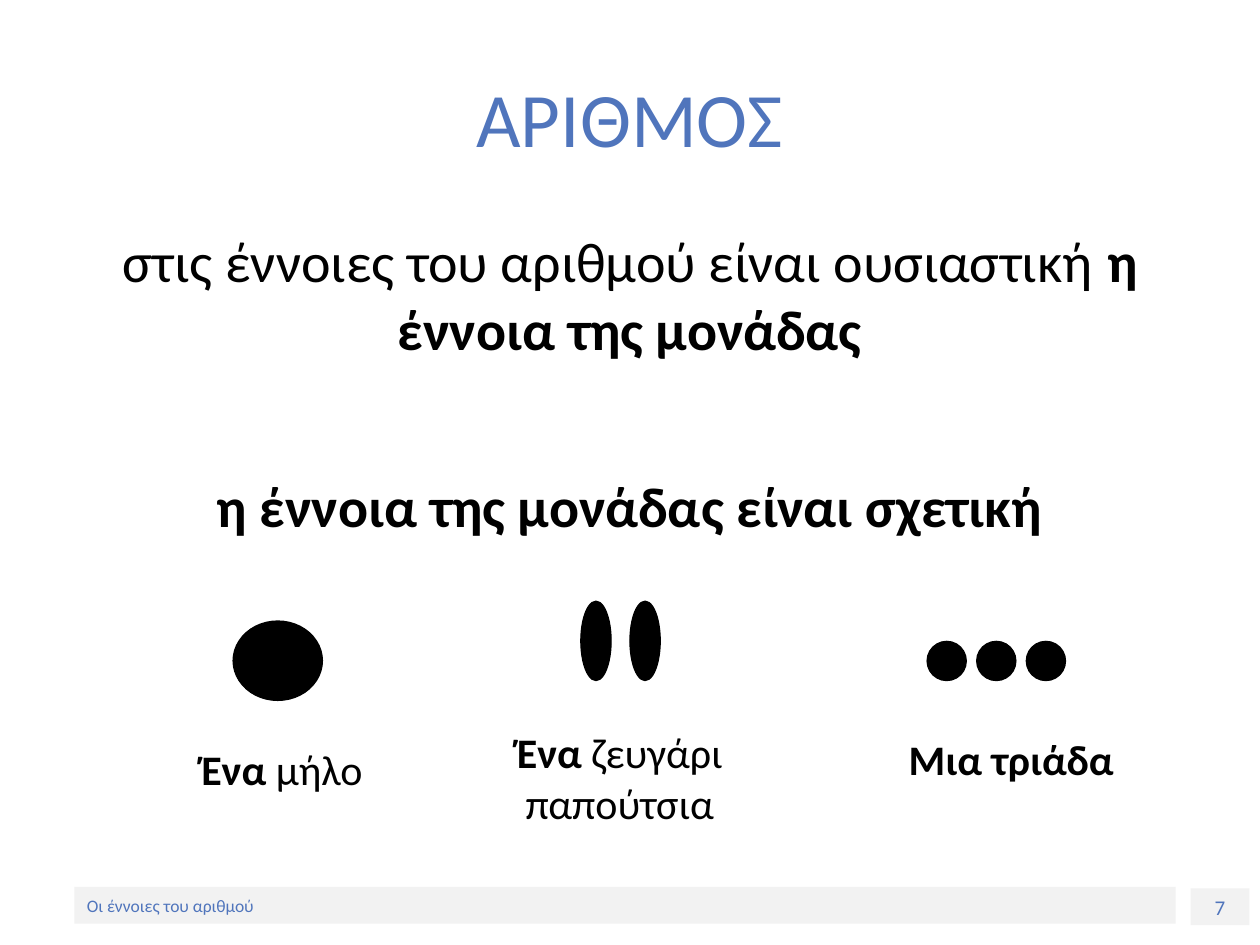
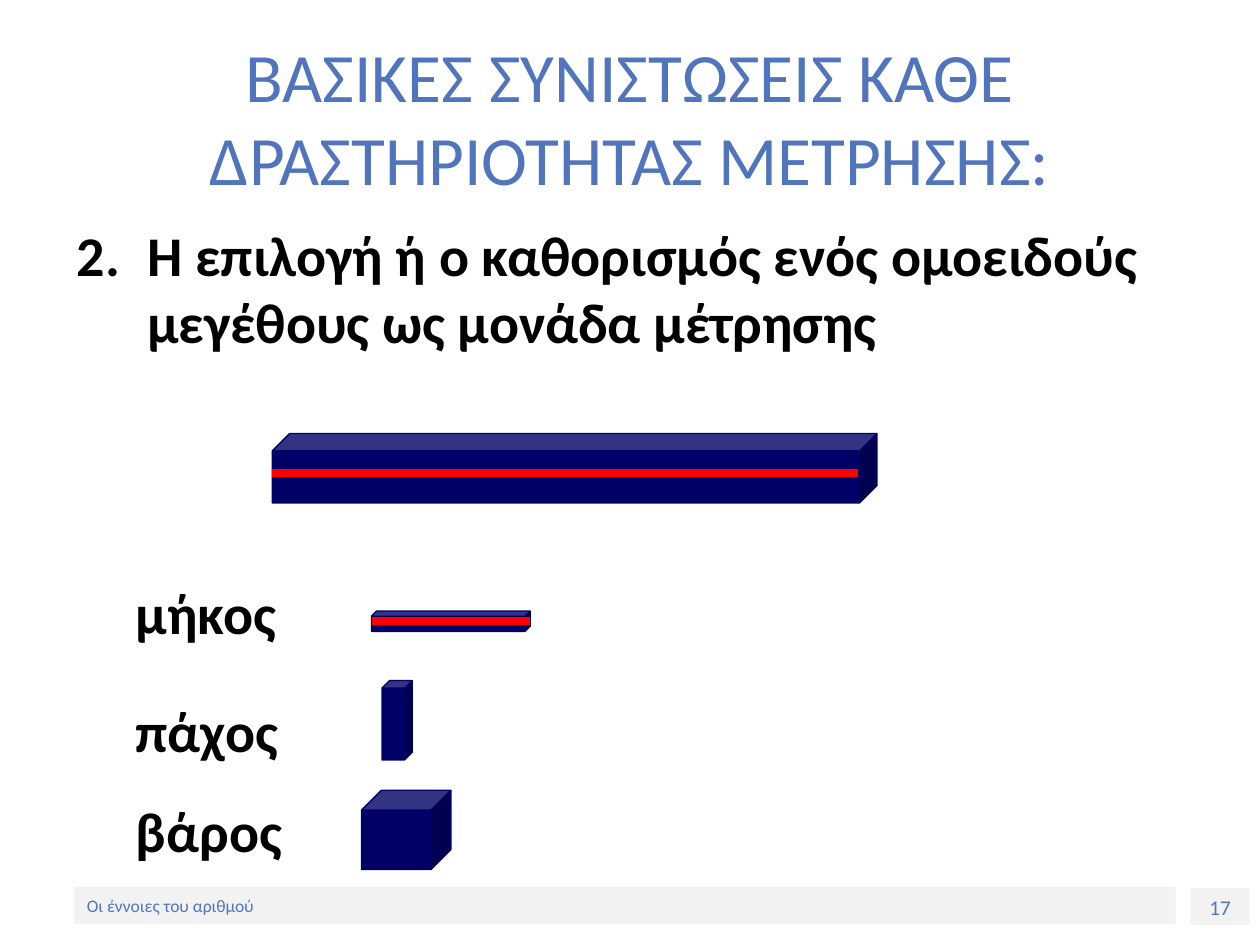
from dataclasses import dataclass

from lxml import etree
from pptx import Presentation
from pptx.dml.color import RGBColor
from pptx.enum.shapes import MSO_CONNECTOR, MSO_SHAPE
from pptx.enum.text import MSO_ANCHOR, PP_ALIGN
from pptx.oxml.ns import qn
from pptx.util import Cm, Pt

LEFT, CENTER = PP_ALIGN.LEFT, PP_ALIGN.CENTER
TOP, MIDDLE = MSO_ANCHOR.TOP, MSO_ANCHOR.MIDDLE
RECT, OVAL, CUBE = MSO_SHAPE.RECTANGLE, MSO_SHAPE.OVAL, MSO_SHAPE.CUBE
STRAIGHT = MSO_CONNECTOR.STRAIGHT


@dataclass(frozen=True)
class Theme:
    font: str = "Calibri"
    blue: str = "5075BC"
    band: str = "F2F2F2"
    ink: str = "000000"
    navy: str = "000066"
    red: str = "FF0000"
    body: float = 32
    label: float = 24
    page: float = 12
    foot: float = 10
    edge: float = 0.75
    mark: float = 4.5


THEME = Theme()

# Boxes are left, top, width, height in cm.
TITLE_BOX = (1.27, 0.76, 22.86, 3.18)
FOOT_BOX = (1.5, 17.88, 22.2, 0.74)
PAGE_BOX = (24, 17.91, 1.19, 0.74)
FOOTER = "Οι έννοιες του αριθμού"

# Paragraphs are lists of (text, bold) runs.
NUMBER = {
    "title": "ΑΡΙΘΜΟΣ", "size": 44, "page": 7,
    "box": (1.27, 4.45, 22.86, 12.57),
    "body": [
        [("στις έννοιες του αριθμού είναι ουσιαστική ", False),
         ("η έννοια της μονάδας", True)],
        [("η έννοια της μονάδας είναι σχετική", True)],
    ],
    "gap": 63,
}
# First dot, count, step from dot to dot, label box, label runs
UNITS = [
    ((4.7, 12.52, 1.8, 1.6), 1, 0, (2.69, 14.86, 5.99, 1.27),
     [("Ένα ", True), ("μήλο", False)]),
    ((11.71, 12.12, 0.61, 1.6), 2, 0.99, (9.5, 14.53, 5.99, 2.31),
     [("Ένα", True), (" ζευγάρι παπούτσια", False)]),
    ((18.69, 12.93, 0.79, 0.79), 3, 1, (16.69, 14.66, 7.39, 1.27),
     [("Μια τριάδα", True)]),
]

MEASURE = {
    "title": "ΒΑΣΙΚΕΣ ΣΥΝΙΣΤΩΣΕΙΣ ΚΑΘΕ ΔΡΑΣΤΗΡΙΟΤΗΤΑΣ ΜΕΤΡΗΣΗΣ:",
    "size": 39.6, "page": 17,
    "box": (1.3, 4.32, 22.86, 13.59),
    "body": [[("Η επιλογή ή ο καθορισμός ενός ομοειδούς μεγέθους "
               "ως μονάδα μέτρησης", True)]],
    "start": 2, "indent": 1.42,
}
BAR = (5.49, 8.74, 12.19, 1.4)
# Name, top of the name, block
SIZES = [
    ("μήκος", 11.53, (7.49, 12.32, 3.2, 0.41)),
    ("πάχος", 13.92, (7.7, 13.72, 0.61, 1.6)),
    ("βάρος", 15.93, (7.29, 15.93, 1.8, 1.6)),
]
NAME_LEFT, NAME_WIDTH, NAME_HEIGHT = 2.49, 8, 1.6
# Left, right and height of each red length
LENGTHS = [(5.49, 17.3, 9.53), (7.49, 10.69, 12.52)]


def rgb(code):
    return RGBColor.from_string(code)


def cms(box):
    return [Cm(n) for n in box]


def write(shape, paras, size, color, align=LEFT, anchor=TOP, gap=0):
    """Fill a shape with paragraphs of (text, bold) runs, gap points apart."""
    frame = shape.text_frame
    frame.word_wrap = True
    frame.vertical_anchor = anchor
    for i, runs in enumerate(paras):
        para = frame.add_paragraph() if i else frame.paragraphs[0]
        para.alignment = align
        if i:
            para.space_before = Pt(gap)
        for text, bold in runs:
            run = para.add_run()
            run.text = text
            font = run.font
            font.name, font.size, font.bold = THEME.font, Pt(size), bold
            font.color.rgb = rgb(color)


def add_text(slide, box, paras, size, color=THEME.ink, **style):
    shape = slide.shapes.add_textbox(*cms(box))
    write(shape, paras, size, color, **style)
    return shape


def add_form(slide, kind, box, fill, edge=True):
    shape = slide.shapes.add_shape(kind, *cms(box))
    shape.shadow.inherit = False
    shape.fill.solid()
    shape.fill.fore_color.rgb = rgb(fill)
    if edge:
        shape.line.color.rgb = rgb(fill)
        shape.line.width = Pt(THEME.edge)
    else:
        shape.line.fill.background()
    return shape


def add_length(slide, left, right, y):
    line = slide.shapes.add_connector(
        STRAIGHT, Cm(left), Cm(y), Cm(right), Cm(y))
    line.line.color.rgb = rgb(THEME.red)
    line.line.width = Pt(THEME.mark)
    etree.SubElement(line._element.spPr, qn("a:effectLst"))


def set_count(para, start, indent):
    """Number a paragraph from start, with a hanging indent in cm."""
    props = para._p.get_or_add_pPr()
    props.set("marL", str(Cm(indent)))
    props.set("indent", str(-Cm(indent)))
    etree.SubElement(props, qn("a:buFont"), typeface="+mj-lt")
    etree.SubElement(props, qn("a:buAutoNum"),
                     type="arabicPeriod", startAt=str(start))


def add_page(deck, data):
    """Add a slide with the shared footer and title."""
    slide = deck.slides.add_slide(deck.slide_layouts[6])
    for box, text, size, align in (
            (PAGE_BOX, str(data["page"]), THEME.page, CENTER),
            (FOOT_BOX, FOOTER, THEME.foot, LEFT)):
        band = add_form(slide, RECT, box, THEME.band, edge=False)
        write(band, [[(text, False)]], size, THEME.blue, align, MIDDLE)
    add_text(slide, TITLE_BOX, [[(data["title"], False)]], data["size"],
             THEME.blue, align=CENTER, anchor=MIDDLE)
    return slide


def add_number(deck):
    slide = add_page(deck, NUMBER)
    add_text(slide, NUMBER["box"], NUMBER["body"], THEME.body,
             align=CENTER, gap=NUMBER["gap"])
    for (x, y, w, h), count, step, box, label in UNITS:
        for i in range(count):
            add_form(slide, OVAL, (x + i * step, y, w, h), THEME.ink)
        add_text(slide, box, [label], THEME.label, align=CENTER)


def add_measure(deck):
    slide = add_page(deck, MEASURE)
    body = add_text(slide, MEASURE["box"], MEASURE["body"], THEME.body)
    set_count(body.text_frame.paragraphs[0],
              MEASURE["start"], MEASURE["indent"])
    add_form(slide, CUBE, BAR, THEME.navy)
    for name, top, block in SIZES:
        add_text(slide, (NAME_LEFT, top, NAME_WIDTH, NAME_HEIGHT),
                 [[(name, True)]], THEME.body)
        add_form(slide, CUBE, block, THEME.navy)
    for length in LENGTHS:
        add_length(slide, *length)


def main():
    deck = Presentation()
    deck.slide_width, deck.slide_height = Cm(25.4), Cm(19.05)
    add_number(deck)
    add_measure(deck)
    deck.save("out.pptx")


if __name__ == "__main__":
    main()
